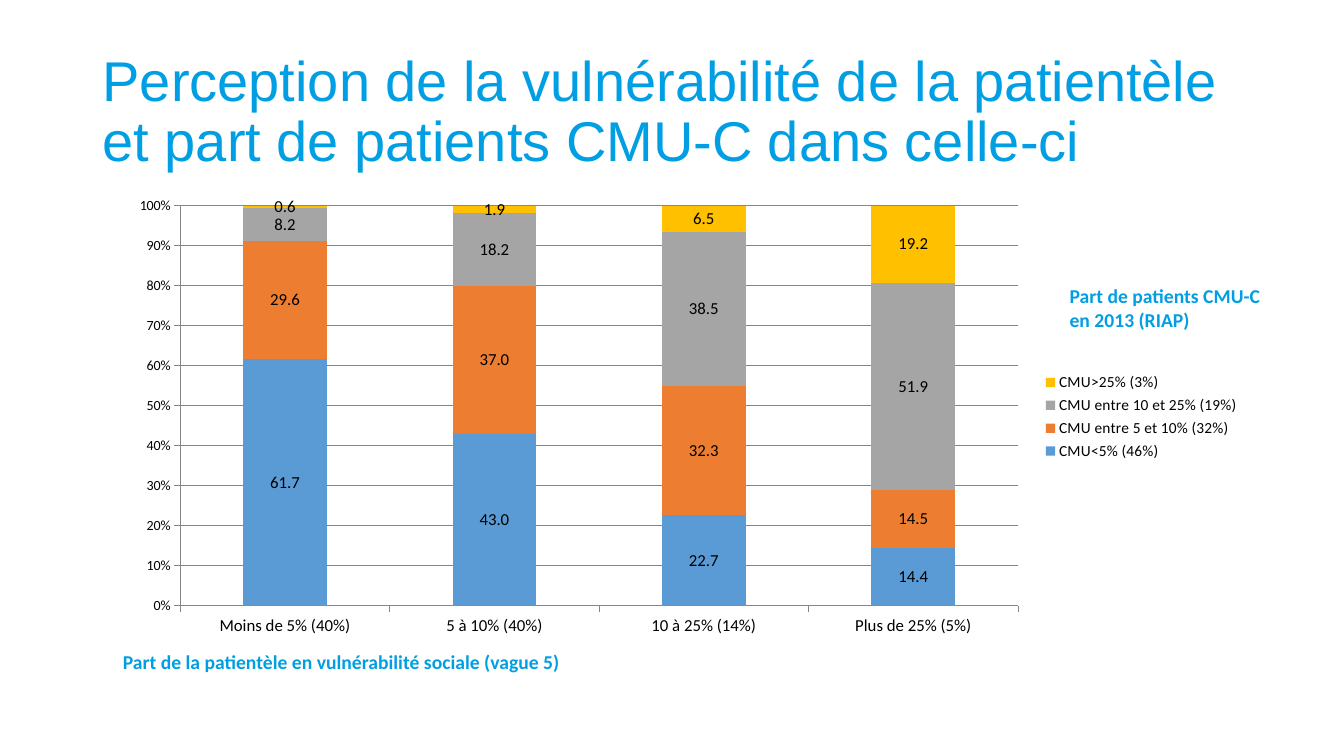
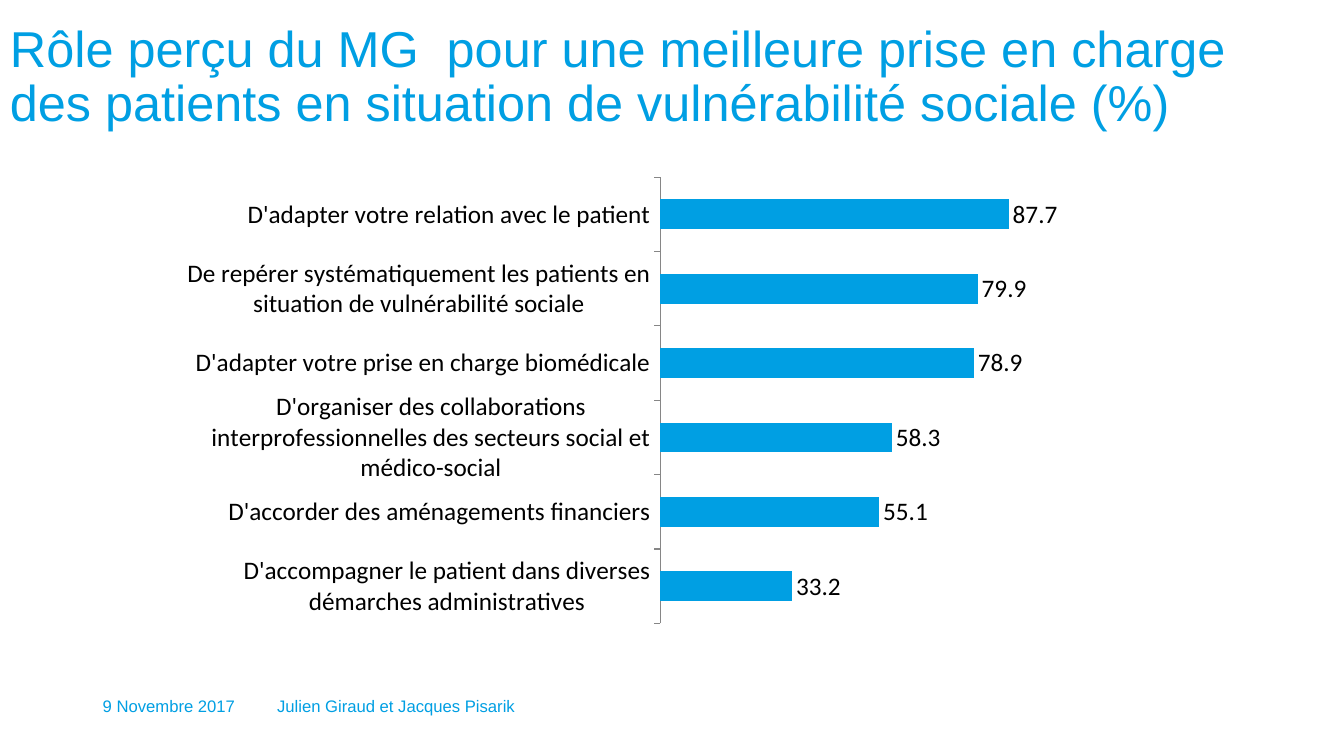
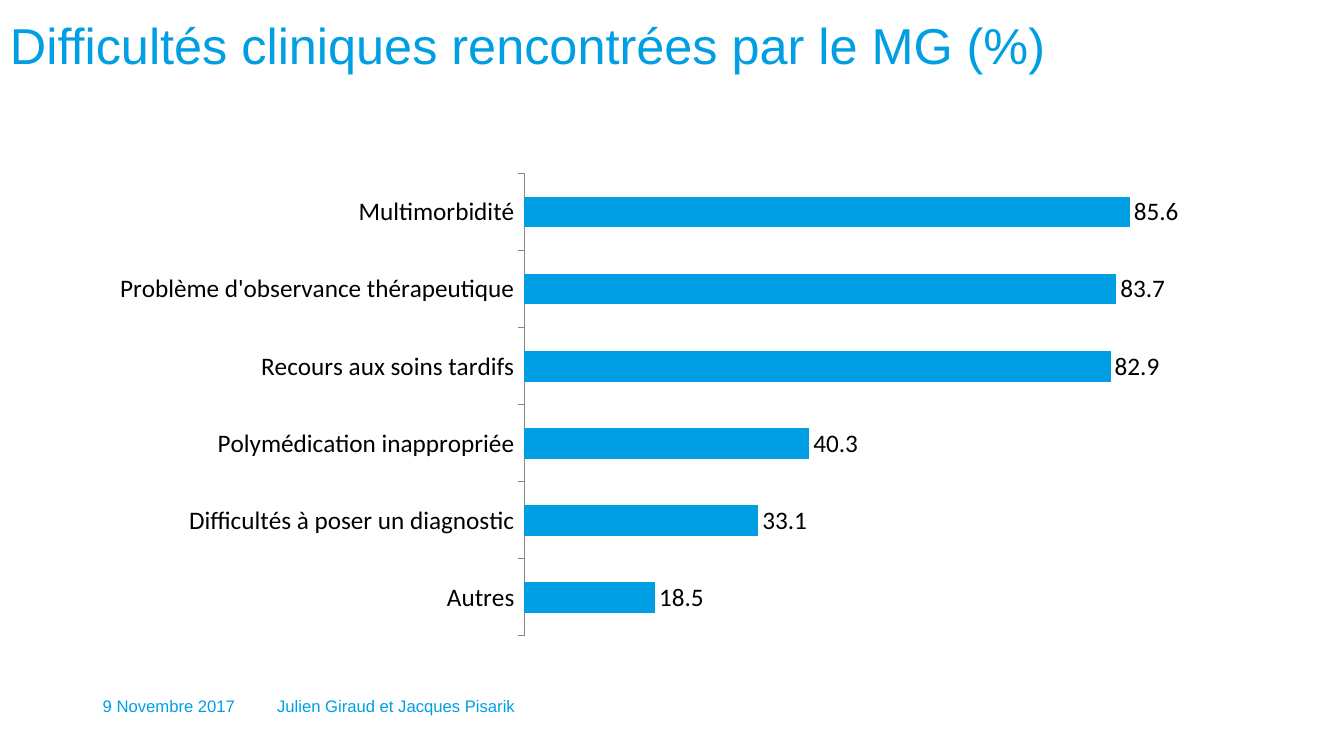
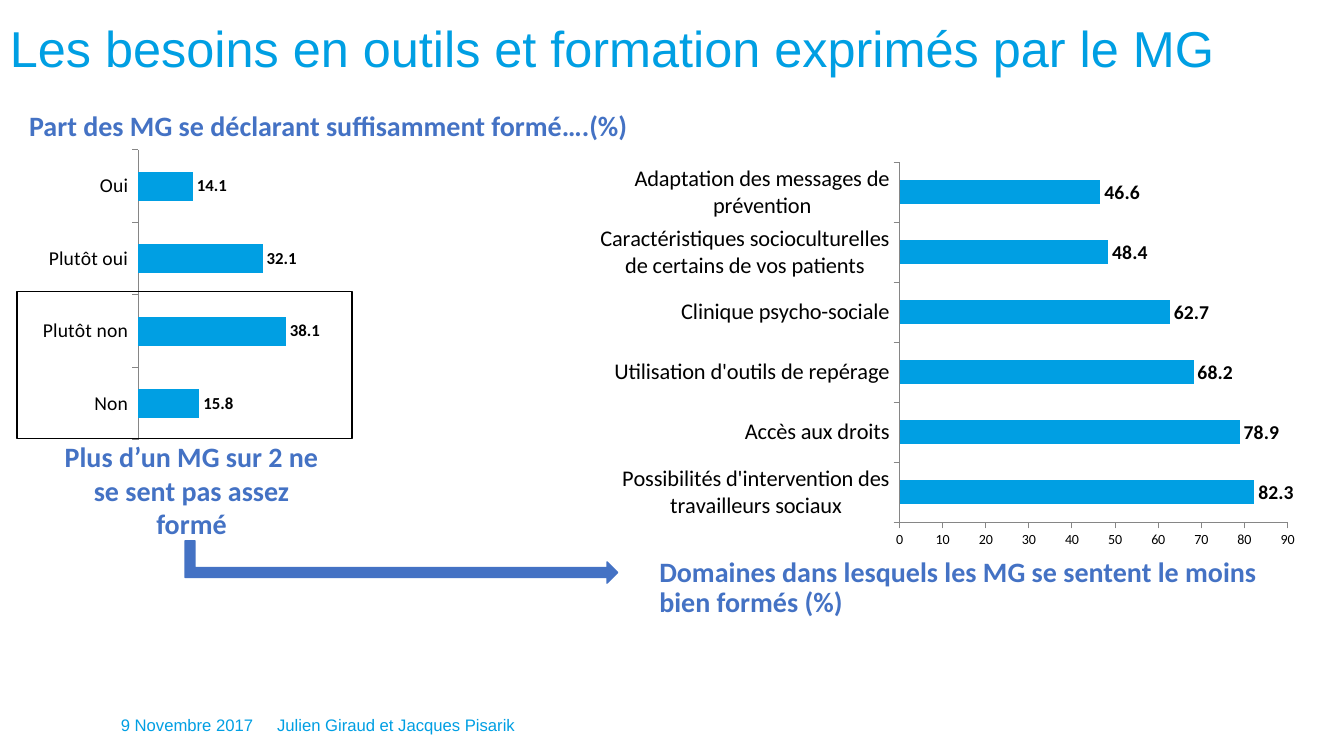
import pptx
import pptx.chart.data
import pptx.dml.color
import pptx.enum.chart
import pptx.enum.shapes
import pptx.enum.text
import pptx.oxml
import pptx.oxml.ns
import pptx.util

Inches, Pt = pptx.util.Inches, pptx.util.Pt
RGBColor = pptx.dml.color.RGBColor
XL = pptx.enum.chart
MSO_SHAPE = pptx.enum.shapes.MSO_SHAPE
ANCHOR = pptx.enum.text.MSO_ANCHOR
ALIGN = pptx.enum.text.PP_ALIGN

# Shared colours and formats
CYAN = RGBColor(0x00, 0x9F, 0xE3)
ROYAL = RGBColor(0x44, 0x72, 0xC4)
BLACK = RGBColor(0, 0, 0)
GREY = RGBColor(0x86, 0x86, 0x86)
CMU_COLOURS = [RGBColor(0x5B, 0x9B, 0xD5), RGBColor(0xED, 0x7D, 0x31),
               RGBColor(0xA5, 0xA5, 0xA5), RGBColor(0xFF, 0xC0, 0x00)]
COVER_TITLE = {"name": "Arial", "size": Pt(40)}
TITLE = {"name": "Arial", "size": Pt(36)}
FOOTER = {"name": "Arial", "size": Pt(11.9)}
CAPTION = {"name": "Calibri", "size": Pt(14), "bold": True}
MESSAGE = {"name": "Calibri", "size": Pt(20), "bold": True}


def add_text(slide, box, lines, style, colour, spacing=1.0,
             anchor=ANCHOR.TOP, align=ALIGN.LEFT):
    frame = slide.shapes.add_textbox(*map(Inches, box)).text_frame
    frame.word_wrap = True
    frame.vertical_anchor = anchor
    for number, line in enumerate(lines):
        paragraph = frame.add_paragraph() if number else frame.paragraphs[0]
        paragraph.line_spacing = spacing
        paragraph.alignment = align
        run = paragraph.add_run()
        run.text = line
        for key, value in style.items():
            setattr(run.font, key, value)
        run.font.color.rgb = colour


def add_chart(slide, kind, box, plot_area, categories, series, colours,
              category_size, label_style, axis_max, axis_step=10):
    data = pptx.chart.data.CategoryChartData(number_format="0.0")
    data.categories = categories
    for name, values in series:
        data.add_series(name, values)
    chart = slide.shapes.add_chart(kind, *map(Inches, box), data).chart
    chart.has_title = False
    chart.has_legend = False
    for key, value in {"name": "Calibri", "size": Pt(10)}.items():
        setattr(chart.font, key, value)
    chart.font.color.rgb = BLACK

    # Axes
    scale = chart.value_axis
    for key, value in {"minimum_scale": 0, "maximum_scale": axis_max,
                       "major_unit": axis_step, "has_major_gridlines": False}.items():
        setattr(scale, key, value)
    for axis in (scale, chart.category_axis):
        axis.major_tick_mark = XL.XL_TICK_MARK.OUTSIDE
        axis.format.line.color.rgb = GREY
        axis.format.line.width = Pt(0.75)
    chart.category_axis.tick_labels.font.size = Pt(category_size)

    # Bars and their labels
    plot = chart.plots[0]
    plot.gap_width = 150
    plot.vary_by_categories = False
    for bars, colour in zip(plot.series, colours):
        bars.format.fill.solid()
        bars.format.fill.fore_color.rgb = colour
        bars.invert_if_negative = False
    plot.has_data_labels = True
    labels = plot.data_labels
    for key, value in {"show_value": True, "number_format": "0.0",
                       "number_format_is_linked": False}.items():
        setattr(labels, key, value)
    for key, value in label_style.items():
        setattr(labels.font, key, value)
    if kind == XL.XL_CHART_TYPE.BAR_CLUSTERED:
        labels.position = XL.XL_LABEL_POSITION.OUTSIDE_END

    # Inner plot area as fractions of the chart
    area = plot._element.getparent()
    for old in area.findall(pptx.oxml.ns.qn("c:layout")):
        area.remove(old)
    sizes = "".join(f'<c:{tag} val="{value}"/>' for tag, value in zip("xywh", plot_area))
    area.insert(0, pptx.oxml.parse_xml(
        f'<c:layout {pptx.oxml.ns.nsdecls("c")}><c:manualLayout>'
        '<c:layoutTarget val="inner"/><c:xMode val="edge"/><c:yMode val="edge"/>'
        f'{sizes}</c:manualLayout></c:layout>'))
    return chart


deck = pptx.Presentation()
deck.slide_width, deck.slide_height = Inches(13.33), Inches(7.5)

# Titles and footers: title box, title, style, (date left, footer top)
openings = [
    ((0.92, 0.4, 11.5, 1.45),
     "Perception de la vulnérabilité de la patientèle et part de patients CMU-C dans celle-ci",
     COVER_TITLE, None),
    ((0, 0.05, 12.92, 1.45),
     "Rôle perçu du MG  pour une meilleure prise en charge des patients en situation "
     "de vulnérabilité sociale (%)", TITLE, (0.92, 6.83)),
    ((0, 0.05, 12.92, 0.85), "Difficultés cliniques rencontrées par le MG (%)",
     TITLE, (0.92, 6.83)),
    ((0, 0.05, 12.92, 0.92), "Les besoins en outils et formation exprimés par le MG",
     TITLE, (1.1, 7.02)),
]
slides = []
for box, title, style, footer in openings:
    slide = deck.slides.add_slide(deck.slide_layouts[6])
    slides.append(slide)
    add_text(slide, box, [title], style, CYAN, 0.9, ANCHOR.MIDDLE)
    if footer:
        date_left, top = footer
        for left, width, words in [(date_left, 1.58, "9 Novembre 2017"),
                                   (2.65, 2.64, "Julien Giraud et Jacques Pisarik")]:
            add_text(slide, (left, top, width, 0.38), [words], FOOTER, CYAN,
                     0.8, ANCHOR.MIDDLE)
perception, role, difficulties, needs = slides

# Slide 1: CMU-C share by perceived vulnerability
cmu = add_chart(
    perception, XL.XL_CHART_TYPE.COLUMN_STACKED_100, (1.17, 1.87, 11.23, 4.53),
    (0.055, 0.038, 0.74, 0.876),
    ["Moins de 5% (40%)", "5 à 10% (40%)", "10 à 25% (14%)", "Plus de 25% (5%)"],
    [("CMU<5% (46%)", (61.7, 43, 22.7, 14.4)),
     ("CMU entre 5 et 10% (32%)", (29.6, 37, 32.3, 14.5)),
     ("CMU entre 10 et 25% (19%)", (8.2, 18.2, 38.5, 51.9)),
     ("CMU>25% (3%)", (0.6, 1.9, 6.5, 19.2))],
    CMU_COLOURS, 12, {"size": Pt(12)}, 1, 0.1)
cmu.plots[0].overlap = 100
cmu.value_axis.has_major_gridlines = True
cmu.value_axis.major_gridlines.format.line.color.rgb = GREY
cmu.value_axis.tick_labels.number_format = "0%"
cmu.value_axis.tick_labels.number_format_is_linked = False
cmu.has_legend = True
cmu.legend.position = XL.XL_LEGEND_POSITION.RIGHT
cmu.legend.include_in_layout = False
cmu.legend.font.size = Pt(11)
add_text(perception, (1.12, 6.4, 4.97, 0.34),
         ["Part de la patientèle en vulnérabilité sociale (vague 5)"], CAPTION, CYAN)
add_text(perception, (10.51, 2.77, 2.99, 0.57),
         ["Part de patients CMU-C", "en 2013 (RIAP)"], CAPTION, CYAN)

# Slides 2 to 4: bar charts, categories from bottom to top
bar_charts = [
    (role, (1.68, 1.67, 9, 4.58), (0.541, 0.019, 0.438, 0.967), 18,
     {"size": Pt(18)}, 100, False,
     {"D'accompagner le patient dans diverses démarches administratives": 33.2,
      "D'accorder des aménagements financiers": 55.1,
      "D'organiser des collaborations interprofessionnelles des secteurs social "
      "et médico-social": 58.3,
      "D'adapter votre prise en charge biomédicale": 78.9,
      "De repérer systématiquement les patients en situation de vulnérabilité sociale": 79.9,
      "D'adapter votre relation avec le patient": 87.7}),
    (difficulties, (0.98, 1.57, 10.85, 4.89), (0.389, 0.031, 0.582, 0.938), 18,
     {"size": Pt(18)}, 90, False,
     {"Autres": 18.5,
      "Difficultés à poser un diagnostic": 33.1,
      "Polymédication inappropriée": 40.3,
      "Recours aux soins tardifs": 82.9,
      "Problème d'observance thérapeutique": 83.7,
      "Multimorbidité": 85.6}),
    (needs, (0.33, 1.43, 5, 3), (0.208, 0.019, 0.77, 0.959), 14,
     {"size": Pt(12), "bold": True}, 100, False,
     {"Non": 15.8, "Plutôt non": 38.1, "Plutôt oui": 32.1, "Oui": 14.1}),
    (needs, (5.95, 1.48, 7.01, 4), (0.424, 0.033, 0.549, 0.893), 16,
     {"size": Pt(14), "bold": True}, 90, True,
     {"Possibilités d'intervention des travailleurs sociaux": 82.3,
      "Accès aux droits": 78.9,
      "Utilisation d'outils de repérage": 68.2,
      "Clinique psycho-sociale": 62.7,
      "Caractéristiques socioculturelles de certains de vos patients": 48.4,
      "Adaptation des messages de prévention": 46.6}),
]
for slide, box, plot_area, size, label_style, top_value, scale_shown, answers in bar_charts:
    shares = add_chart(slide, XL.XL_CHART_TYPE.BAR_CLUSTERED, box, plot_area,
                       list(answers), [("Series 1", list(answers.values()))], [CYAN],
                       size, label_style, top_value)
    shares.value_axis.visible = scale_shown
    shares.value_axis.tick_labels.number_format = "0"
    shares.value_axis.tick_labels.number_format_is_linked = False

# Slide 4: messages around the two charts
for box, words, spacing, align in [
        ((0.19, 1.07, 6.25, 0.4), "Part des MG se déclarant suffisamment formé….(%)",
         0.9, ALIGN.LEFT),
        ((6.44, 5.49, 6.25, 0.71),
         "Domaines dans lesquels les MG se sentent le moins bien formés (%)",
         0.9, ALIGN.LEFT),
        ((0.5, 4.31, 2.8, 1.11), "Plus d’un MG sur 2 ne se sent pas assez formé",
         1.0, ALIGN.CENTER)]:
    add_text(needs, box, [words], MESSAGE, ROYAL, spacing, align=align)

# Slide 4: arrow to the training topics and frame around the negative answers
arrow = needs.shapes.add_shape(MSO_SHAPE.BENT_UP_ARROW, Inches(3.77), Inches(3.43),
                               Inches(0.42), Inches(4.29))
arrow.rotation = 90
arrow.adjustments[0] = 0.233
arrow.fill.solid()
arrow.fill.fore_color.rgb = ROYAL
untrained = needs.shapes.add_shape(MSO_SHAPE.RECTANGLE, Inches(0.17), Inches(2.89),
                                   Inches(3.32), Inches(1.46))
untrained.fill.background()
for mark, colour in [(arrow, ROYAL), (untrained, BLACK)]:
    mark.shadow.inherit = False
    mark.line.color.rgb = colour
    mark.line.width = Pt(1)

deck.save("out.pptx")
